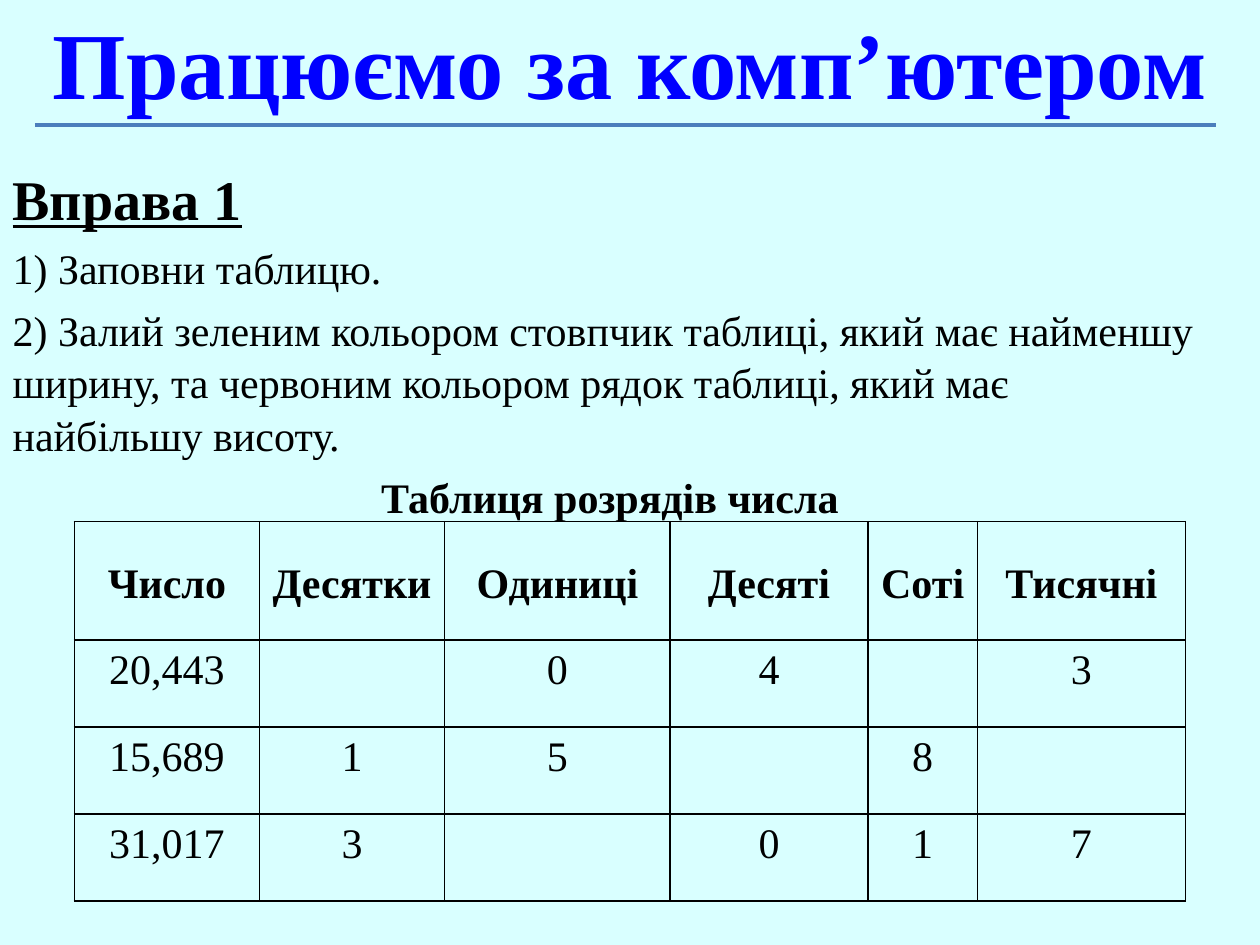
from lxml.etree import SubElement
from pptx import Presentation
from pptx.dml.color import RGBColor
from pptx.enum.shapes import MSO_CONNECTOR
from pptx.enum.text import MSO_ANCHOR, MSO_AUTO_SIZE, PP_ALIGN
from pptx.oxml.ns import qn
from pptx.util import Pt

FONT = "Times New Roman"
BACKGROUND, BLUE, RULE, BLACK = "D9FFFF", "0000FF", "4B7EBC", "000000"

TITLE = "Працюємо за комп’ютером"
EXERCISE = [
    # text, size, bold, underline, alignment
    ("Вправа 1", 32, True, True, PP_ALIGN.LEFT),
    ("1) Заповни таблицю.", 24, False, False, PP_ALIGN.LEFT),
    ("2) Залий зеленим кольором стовпчик таблиці, який має найменшу ширину, "
     "та червоним кольором рядок таблиці, який має найбільшу висоту.",
     24, False, False, PP_ALIGN.LEFT),
    ("Таблиця розрядів числа", 24, True, False, PP_ALIGN.CENTER),
]
DIGITS = [
    ("Число", "Десятки", "Одиниці", "Десяті", "Соті", "Тисячні"),
    ("20,443", "", "0", "4", "", "3"),
    ("15,689", "1", "5", "", "8", ""),
    ("31,017", "3", "", "0", "1", "7"),
]
COLUMN_WIDTHS = (105.8, 105.8, 128.9, 113, 62.6, 118.8)
ROW_HEIGHTS = (67.7, 49.7, 49.7, 49.7)


def rgb(value):
    """Turn a hex string into a colour."""
    return RGBColor.from_string(value)


def place(shape, left, top, width, height):
    """Move and size a shape in points."""
    shape.left, shape.top = Pt(left), Pt(top)
    shape.width, shape.height = Pt(width), Pt(height)


def write(paragraph, text, size, color=BLACK, bold=False, underline=False,
          align=PP_ALIGN.CENTER):
    """Set the text of a paragraph and format its runs."""
    paragraph.text = text
    paragraph.alignment = align
    for run in paragraph.runs:
        font = run.font
        font.name, font.size = FONT, Pt(size)
        font.bold, font.underline = bold, underline
        font.color.rgb = rgb(color)


def outline(cell):
    """Draw a thin black border on all sides of a cell."""
    properties = cell._tc.get_or_add_tcPr()
    for position, side in enumerate(("lnL", "lnR", "lnT", "lnB")):
        line = SubElement(properties, qn(f"a:{side}"), w=str(Pt(1)))
        fill = SubElement(line, qn("a:solidFill"))
        SubElement(fill, qn("a:srgbClr"), val=BLACK)
        properties.insert(position, line)


def add_title(slide):
    """Fill the title and draw the rule below it."""
    title = slide.shapes.title
    place(title, 0, 0, 720, 70.6)
    title.text_frame.auto_size = MSO_AUTO_SIZE.NONE
    title.text_frame.vertical_anchor = MSO_ANCHOR.MIDDLE
    write(title.text_frame.paragraphs[0], TITLE, 54, BLUE, bold=True)

    rule = slide.shapes.add_connector(
        MSO_CONNECTOR.STRAIGHT, Pt(20), Pt(71.3), Pt(694.8), Pt(71.3))
    rule.line.color.rgb = rgb(RULE)
    rule.line.width = Pt(2.5)
    SubElement(rule._element.spPr, qn("a:effectLst"))


def add_exercise(slide):
    """Fill the body with the exercise steps."""
    body = slide.placeholders[1]
    place(body, 0, 88.6, 697, 442)
    frame = body.text_frame
    frame.auto_size = MSO_AUTO_SIZE.NONE
    for index, (text, size, bold, underline, align) in enumerate(EXERCISE):
        paragraph = frame.add_paragraph() if index else frame.paragraphs[0]
        properties = paragraph._p.get_or_add_pPr()
        properties.set("marL", "0")
        properties.set("indent", "0")
        SubElement(properties, qn("a:buNone"))
        paragraph.line_spacing = 1.05
        paragraph.space_before = Pt(0.2 * size if index else 0)
        write(paragraph, text, size, BLACK, bold, underline, align)


def add_digits(slide):
    """Add the table of digit places."""
    table = slide.shapes.add_table(
        len(DIGITS), len(COLUMN_WIDTHS), Pt(42.5), Pt(298.1),
        Pt(sum(COLUMN_WIDTHS)), Pt(sum(ROW_HEIGHTS))).table
    table.first_row = table.horz_banding = False
    for column, width in zip(table.columns, COLUMN_WIDTHS):
        column.width = Pt(width)
    for row_index, (row, height) in enumerate(zip(table.rows, ROW_HEIGHTS)):
        header = row_index == 0
        row.height = Pt(height)
        for cell, text in zip(row.cells, DIGITS[row_index]):
            cell.margin_left = cell.margin_right = Pt(5)
            cell.margin_top = cell.margin_bottom = Pt(0)
            cell.vertical_anchor = MSO_ANCHOR.MIDDLE if header else MSO_ANCHOR.TOP
            cell.fill.background()
            outline(cell)
            paragraph = cell.text_frame.paragraphs[0]
            paragraph.line_spacing = 1.15
            write(paragraph, text, 24, bold=header)


def main():
    """Build the slide and save it."""
    presentation = Presentation()
    presentation.slide_width, presentation.slide_height = Pt(720), Pt(540)
    slide = presentation.slides.add_slide(presentation.slide_layouts[1])
    slide.background.fill.solid()
    slide.background.fill.fore_color.rgb = rgb(BACKGROUND)
    add_title(slide)
    add_exercise(slide)
    add_digits(slide)
    presentation.save("out.pptx")


if __name__ == "__main__":
    main()
